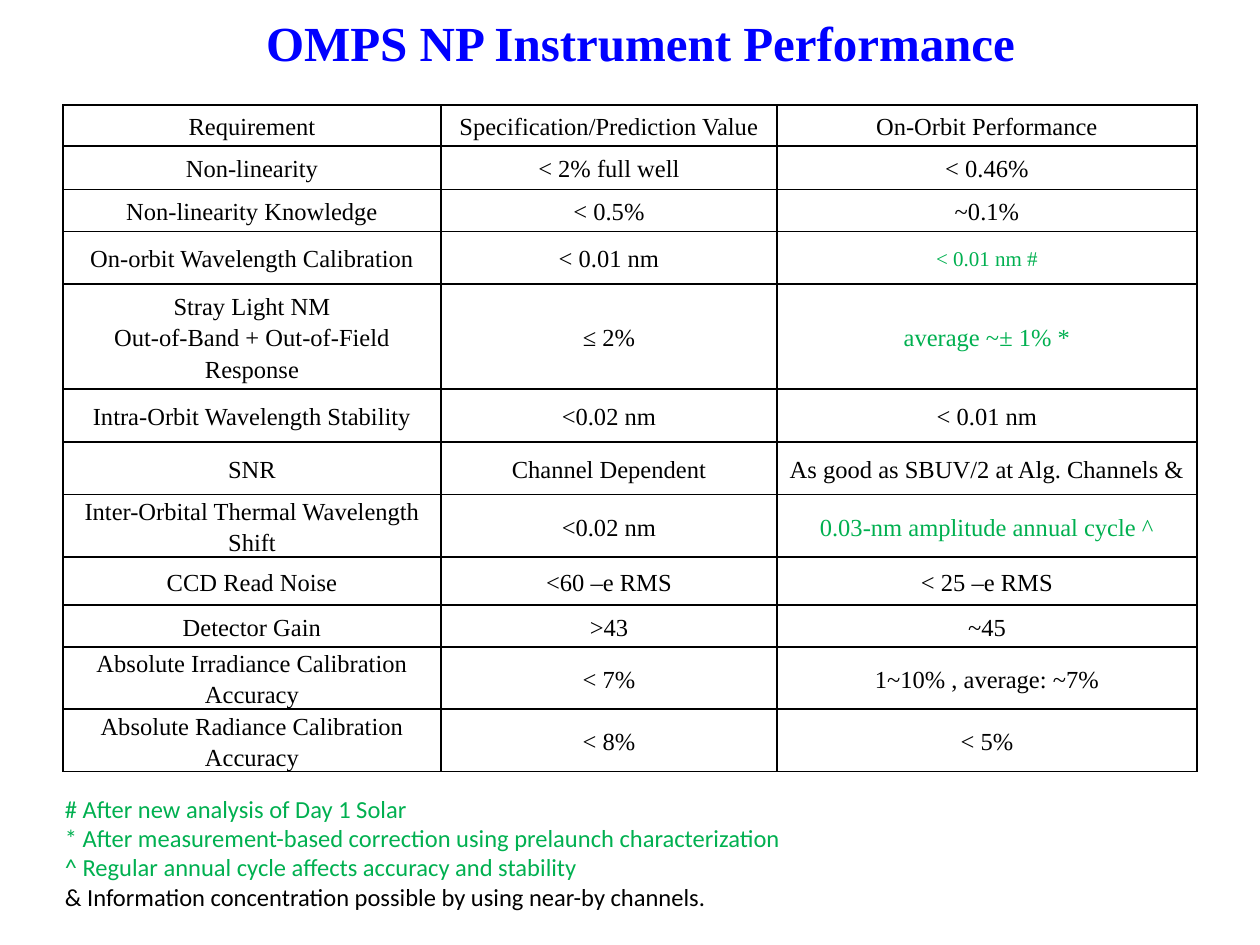
from dataclasses import dataclass

from lxml import etree
from pptx import Presentation
from pptx.dml.color import RGBColor
from pptx.enum import text
from pptx.oxml import ns
from pptx.util import Pt


@dataclass(frozen=True)
class Theme:
    serif: str = "Times New Roman"
    sans: str = "Calibri"
    title: str = "0000FF"
    ink: str = "000000"
    note: str = "00B050"
    title_size: int = 28
    body_size: int = 14
    small_size: int = 12
    border: int = 1


THEME = Theme()
TITLE = "OMPS NP Instrument Performance"
COLUMN_WIDTHS = (216, 192, 240)
# Row height, then requirement, specification and on-orbit value
ROWS = [
    (23.4, "Requirement", "Specification/Prediction Value", "On-Orbit Performance"),
    (24.8, "Non-linearity", "< 2% full well", "< 0.46%"),
    (24, "Non-linearity Knowledge", "< 0.5%", "~0.1%"),
    (30.2, "On-orbit Wavelength Calibration", "< 0.01 nm", "< 0.01 nm #"),
    (60, "Stray Light NM\nOut-of-Band + Out-of-Field Response", "≤ 2%",
     "average ~± 1% *"),
    (30.2, "Intra-Orbit Wavelength Stability", "<0.02 nm", "< 0.01 nm"),
    (30.2, "SNR", "Channel Dependent", "As good as SBUV/2 at Alg. Channels &"),
    (35.6, "Inter-Orbital Thermal Wavelength Shift", "<0.02 nm",
     "0.03-nm amplitude annual cycle ^"),
    (27.4, "CCD Read Noise", "<60 –e RMS", "< 25 –e RMS"),
    (24, "Detector Gain", ">43", "~45"),
    (35.6, "Absolute Irradiance Calibration Accuracy", "< 7%", "1~10% , average: ~7%"),
    (35.6, "Absolute Radiance Calibration Accuracy", "< 8%", "< 5%"),
]
NOTED = {"< 0.01 nm #": THEME.small_size,
         "average ~± 1% *": THEME.body_size,
         "0.03-nm amplitude annual cycle ^": THEME.body_size}
FOOTNOTES = [
    ("# After new analysis of Day 1 Solar", THEME.note),
    ("* After measurement-based correction using prelaunch characterization", THEME.note),
    ("^ Regular annual cycle affects accuracy and stability", THEME.note),
    ("& Information concentration possible by using near-by channels.", THEME.ink),
]


def style(p, face, size, color, bold=False):
    p.font.name, p.font.size, p.font.bold = face, Pt(size), bold
    p.font.color.rgb = RGBColor.from_string(color)


def add_borders(cell):
    tcPr = cell._tc.get_or_add_tcPr()
    for i, side in enumerate(("lnL", "lnR", "lnT", "lnB")):
        ln = etree.Element(ns.qn(f"a:{side}"), w=str(Pt(THEME.border)))
        fill = etree.SubElement(ln, ns.qn("a:solidFill"))
        etree.SubElement(fill, ns.qn("a:srgbClr"), val=THEME.ink)
        tcPr.insert(i, ln)


def fill_cell(cell, value, header):
    cell.fill.background()
    add_borders(cell)
    cell.vertical_anchor = text.MSO_ANCHOR.MIDDLE
    cell.margin_left = cell.margin_right = Pt(5)
    cell.margin_top = cell.margin_bottom = 0
    cell.text_frame.text = value
    for p in cell.text_frame.paragraphs:
        p.alignment = text.PP_ALIGN.CENTER
        p.line_spacing = 1.15
        p.space_after = Pt(10 if header else 0)
        style(p, THEME.serif, NOTED.get(value, THEME.body_size),
              THEME.note if value in NOTED else THEME.ink)


def add_title(slide):
    sp = slide.shapes.title
    sp.left, sp.top, sp.width, sp.height = Pt(42), Pt(6), Pt(648), Pt(36)
    tf = sp.text_frame
    tf.text = TITLE
    tf.auto_size = text.MSO_AUTO_SIZE.NONE
    tf.vertical_anchor = text.MSO_ANCHOR.MIDDLE
    p = tf.paragraphs[0]
    p.alignment = text.PP_ALIGN.CENTER
    style(p, THEME.serif, THEME.title_size, THEME.title, bold=True)


def add_performance_table(slide):
    table = slide.shapes.add_table(
        len(ROWS), len(COLUMN_WIDTHS), Pt(36), Pt(60),
        Pt(sum(COLUMN_WIDTHS)), Pt(sum(row[0] for row in ROWS))).table
    table.first_row = table.horz_banding = False
    for column, width in zip(table.columns, COLUMN_WIDTHS):
        column.width = Pt(width)
    for r, (height, *values) in enumerate(ROWS):
        table.rows[r].height = Pt(height)
        for c, value in enumerate(values):
            fill_cell(table.cell(r, c), value, header=r == 0)


def add_footnotes(slide):
    tf = slide.shapes.add_textbox(Pt(30), Pt(450), Pt(596), Pt(78)).text_frame
    tf.word_wrap = True
    tf.text = "\n".join(note for note, _ in FOOTNOTES)
    for p, (_, color) in zip(tf.paragraphs, FOOTNOTES):
        style(p, THEME.sans, THEME.body_size, color)


def main():
    prs = Presentation()
    prs.slide_width, prs.slide_height = Pt(720), Pt(540)
    slide = prs.slides.add_slide(prs.slide_layouts.get_by_name("Title Only"))
    add_title(slide)
    add_performance_table(slide)
    add_footnotes(slide)
    prs.save("out.pptx")


if __name__ == "__main__":
    main()
